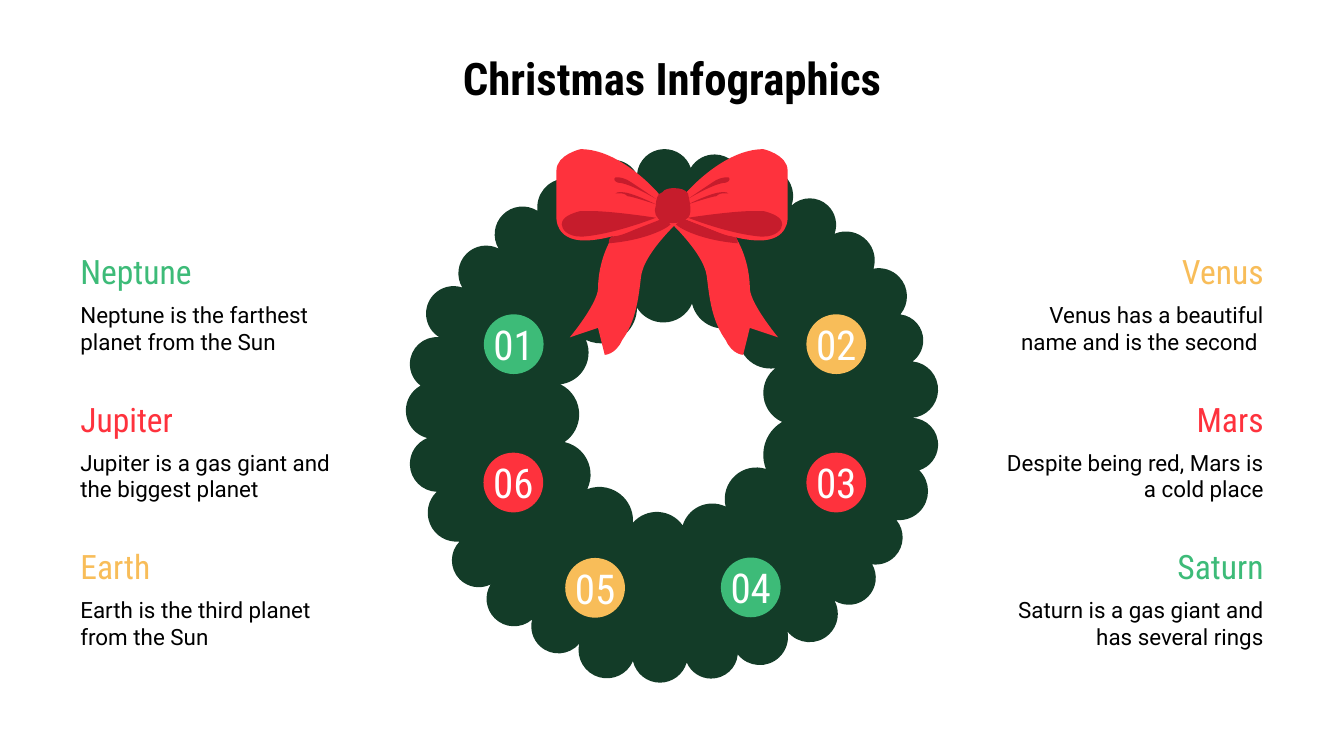
import math
from dataclasses import dataclass

import lxml.etree
import pptx
import pptx.dml.color
import pptx.enum.shapes
import pptx.enum.text
import pptx.oxml.ns
import pptx.util

Pt = pptx.util.Pt
qn = pptx.oxml.ns.qn
PP_ALIGN = pptx.enum.text.PP_ALIGN
ANCHOR = pptx.enum.text.MSO_ANCHOR


@dataclass(frozen=True)
class Theme:
    leaf: str = "133C28"
    green: str = "3DBB78"
    red: str = "FE323D"
    dark_red: str = "C61C2C"
    yellow: str = "F8BD59"
    black: str = "000000"
    white: str = "FFFFFF"
    display: str = "Roboto Condensed"
    body: str = "Roboto"
    title_size: int = 24
    badge_size: int = 22
    heading_size: int = 18
    body_size: int = 12


theme = Theme()
GRID = Pt(0.72)  # drawing unit of the wreath and bow outlines

deck = pptx.Presentation()
deck.slide_width, deck.slide_height = Pt(720), Pt(405)
page = deck.slides.add_slide(deck.slide_layouts[6])


def draw_outline(contours, colour):
    """Fill contours of complex grid points: a start, then lines (1 point) or curves (3)."""
    builder = None
    for start, *segments in contours:
        corner = (start[0].real * GRID, start[0].imag * GRID)
        if builder is None:
            builder = page.shapes.build_freeform(*corner, scale=1.0)
        else:
            builder.move_to(*corner)
        ends = [(segment[-1].real * GRID, segment[-1].imag * GRID) for segment in segments]
        builder.add_line_segments(ends, close=True)
    shape = builder.convert_to_shape()
    shape.shadow.inherit = False
    shape.fill.solid()
    shape.fill.fore_color.rgb = pptx.dml.color.RGBColor.from_string(colour)
    shape.line.fill.background()
    all_segments = [segment for contour in contours for segment in contour[1:]]
    for line, segment in zip(list(shape._element.iter(qn("a:lnTo"))), all_segments):
        if len(segment) == 3:  # bend the line into a Bézier curve
            line.tag = qn("a:cubicBezTo")
            for position, control in enumerate(segment[:2]):
                handle = lxml.etree.Element(qn("a:pt"))
                handle.set("x", str(round(control.real * GRID - shape.left)))
                handle.set("y", str(round(control.imag * GRID - shape.top)))
                line.insert(position, handle)


def write_text(shape, text, size, colour, font, align, anchor, inset=7.2, bold=False):
    frame = shape.text_frame
    frame.word_wrap = inset > 0
    frame.vertical_anchor = anchor
    frame.margin_left = frame.margin_right = Pt(inset)
    frame.margin_top = frame.margin_bottom = Pt(inset)
    para = frame.paragraphs[0]
    para.alignment = align
    span = para.add_run()
    span.text = text
    span.font.size = Pt(size)
    span.font.name = font
    span.font.bold = bold
    span.font.color.rgb = pptx.dml.color.RGBColor.from_string(colour)


# Wreath: each scallop is (valley x, valley y, x and y of a point on its arc)
outer_scallops = [
    (474, 130, 456, 119), (436, 139, 420, 133), (400, 157, 374, 160), (371, 185, 347, 189),
    (344, 214, 323, 219), (327, 251, 305, 271), (313, 287, 302, 306), (318, 326, 305, 346),
    (325, 366, 320, 390), (342, 403, 342, 431), (365, 435, 368, 460), (396, 461, 402, 481),
    (431, 479, 446, 504), (471, 492, 491, 508), (511, 493, 529, 505), (549, 487, 580, 489),
    (586, 470, 617, 472), (621, 447, 646, 444), (649, 420, 666, 414), (667, 387, 684, 381),
    (684, 350, 698, 332), (678, 311, 698, 291), (679, 269, 687, 254), (670, 234, 669, 206),
    (650, 200, 645, 179), (621, 174, 616, 153), (589, 153, 583, 130), (552, 133, 532, 115),
    (514, 125, 494, 111),
]
inner_scallops = [
    (515, 226, 530, 243), (551, 241, 556, 267), (577, 274, 568, 292), (582, 314, 568, 337),
    (570, 349, 547, 354), (540, 377, 520, 377), (508, 391, 490, 381), (471, 389, 464, 370),
    (437, 364, 435, 339), (420, 329, 431, 309), (417, 286, 433, 277), (436, 253, 466, 248),
    (474, 229, 494, 240),
]
wreath = []
for scallops in (outer_scallops, inner_scallops):
    contour = [[complex(*scallops[0][:2])]]
    for scallop, following in zip(scallops, scallops[1:] + scallops[:1]):
        start, middle = complex(*scallop[:2]), complex(*scallop[2:])
        end = complex(*following[:2])
        ratio = (end - start) / (middle - start)
        center = start + (middle - start) * (ratio - abs(ratio) ** 2) / (2j * ratio.imag)
        for first, last in ((start, middle), (middle, end)):
            turn = (last - center) / (first - center)
            reach = 4j / 3 * math.tan(math.atan2(turn.imag, turn.real) / 4)
            contour.append([first + reach * (first - center), last - reach * (last - center), last])
    wreath.append(contour)
draw_outline(wreath, theme.leaf)

# Numbered badges
BADGE = 32
badges = [
    ("01", 275.2, 184.4, theme.green), ("02", 448, 184.4, theme.yellow),
    ("03", 448, 258.5, theme.red), ("04", 402.2, 314.7, theme.green),
    ("05", 318.8, 314.9, theme.yellow), ("06", 275, 258.5, theme.red),
]
for number, x, y, colour in badges:
    badge = page.shapes.add_shape(pptx.enum.shapes.MSO_SHAPE.OVAL, Pt(x - BADGE / 2),
                                  Pt(y - BADGE / 2), Pt(BADGE), Pt(BADGE))
    badge.shadow.inherit = False
    badge.fill.solid()
    badge.fill.fore_color.rgb = pptx.dml.color.RGBColor.from_string(colour)
    badge.line.fill.background()
    write_text(badge, number, theme.badge_size, theme.white, theme.display,
               PP_ALIGN.CENTER, ANCHOR.MIDDLE, inset=0)

# Bow: right half as (colour, sum of mirrored x values, start and segments);
# two numbers make a line, six a Bézier curve. No mirror sum means a single part.
bow = [
    (theme.red, 1003, [  # ribbon tail
        (517, 152), (493, 160), (493, 160, 524, 187, 526, 206), (528, 223, 530, 239, 540, 253),
        (545, 264, 553, 264, 553, 264), (558, 244), (579, 251), (579, 251, 559, 227, 558, 215),
        (558, 202, 554, 183, 542, 169), (533, 157, 517, 152, 517, 152)]),
    (theme.dark_red, 1002, [  # shadow on the tail
        (507, 162), (507, 164, 505, 165, 503, 167), (507, 171, 524, 179, 549, 181),
        (549, 179, 549, 178, 547, 176), (542, 176, 537, 174, 530, 171)]),
    (theme.red, 1000, [  # loop
        (568, 111), (538, 111, 510, 144, 510, 144), (507, 162), (530, 171),
        (545, 177, 557, 179, 565, 179), (587, 179, 586, 162, 586, 162), (586, 127),
        (586, 115, 568, 111, 568, 111)]),
    (theme.dark_red, 1000, [  # inside of the loop
        (561, 157), (544, 157, 512, 162, 512, 162), (512, 162, 542, 174, 566, 176), (568, 176),
        (577, 176, 582, 171, 582, 167), (582, 164, 580, 160, 568, 157)]),
    (theme.dark_red, 1000, [  # upper crease
        (540, 132), (540, 132, 537, 132, 533, 134), (528, 137, 512, 148, 512, 148),
        (512, 148, 532, 136, 540, 136), (545, 134, 542, 132, 542, 132)]),
    (theme.dark_red, 1000, [  # lower crease
        (537, 143), (530, 143, 512, 152, 512, 152), (512, 152, 530, 146, 533, 146),
        (535, 144, 537, 144, 537, 144), (542, 144), (542, 143, 540, 143, 537, 143)]),
    (theme.dark_red, None, [  # knot
        (501, 140), (498, 140, 494, 141, 493, 143), (489, 144, 488, 149, 488, 153),
        (486, 157, 488, 164, 494, 165), (496, 166, 499, 166, 501, 166),
        (505, 166, 509, 165, 512, 162), (516, 158, 512, 146, 512, 144),
        (510, 141, 506, 140, 501, 140)]),
]
for colour, mirror_sum, segments in bow:
    contour = [[complex(x, y) for x, y in zip(segment[::2], segment[1::2])]
               for segment in segments]
    draw_outline([contour], colour)
    if mirror_sum:
        mirrored = [[mirror_sum - point.conjugate() for point in segment] for segment in contour]
        draw_outline([mirrored], colour)

# Planet descriptions in two columns
columns = [
    (36, 153.4, PP_ALIGN.LEFT, [
        ("Neptune", "Neptune is the farthest planet from the Sun", theme.green),
        ("Jupiter", "Jupiter is a gas giant and the biggest planet", theme.red),
        ("Earth", "Earth is the third planet from the Sun", theme.yellow)]),
    (529.2, 154.8, PP_ALIGN.RIGHT, [
        ("Venus", "Venus has a beautiful name and is the second ", theme.yellow),
        ("Mars", "Despite being red, Mars is a cold place", theme.red),
        ("Saturn", "Saturn is a gas giant and has several rings", theme.green)]),
]
for left, width, align, planets in columns:
    for row, (name, description, colour) in enumerate(planets):
        top = 126.7 + 79.2 * row
        box = page.shapes.add_textbox(Pt(left), Pt(top), Pt(width), Pt(36.7))
        write_text(box, name, theme.heading_size, colour, theme.display, align, ANCHOR.MIDDLE)
        box = page.shapes.add_textbox(Pt(left), Pt(top + 35.6), Pt(width), Pt(26.6))
        write_text(box, description, theme.body_size, theme.black, theme.body, align, ANCHOR.MIDDLE)

title = page.shapes.add_textbox(Pt(36), Pt(32.4), Pt(648), Pt(31))
write_text(title, "Christmas Infographics", theme.title_size, theme.black, theme.display,
           PP_ALIGN.CENTER, ANCHOR.BOTTOM, bold=True)

deck.save("out.pptx")
